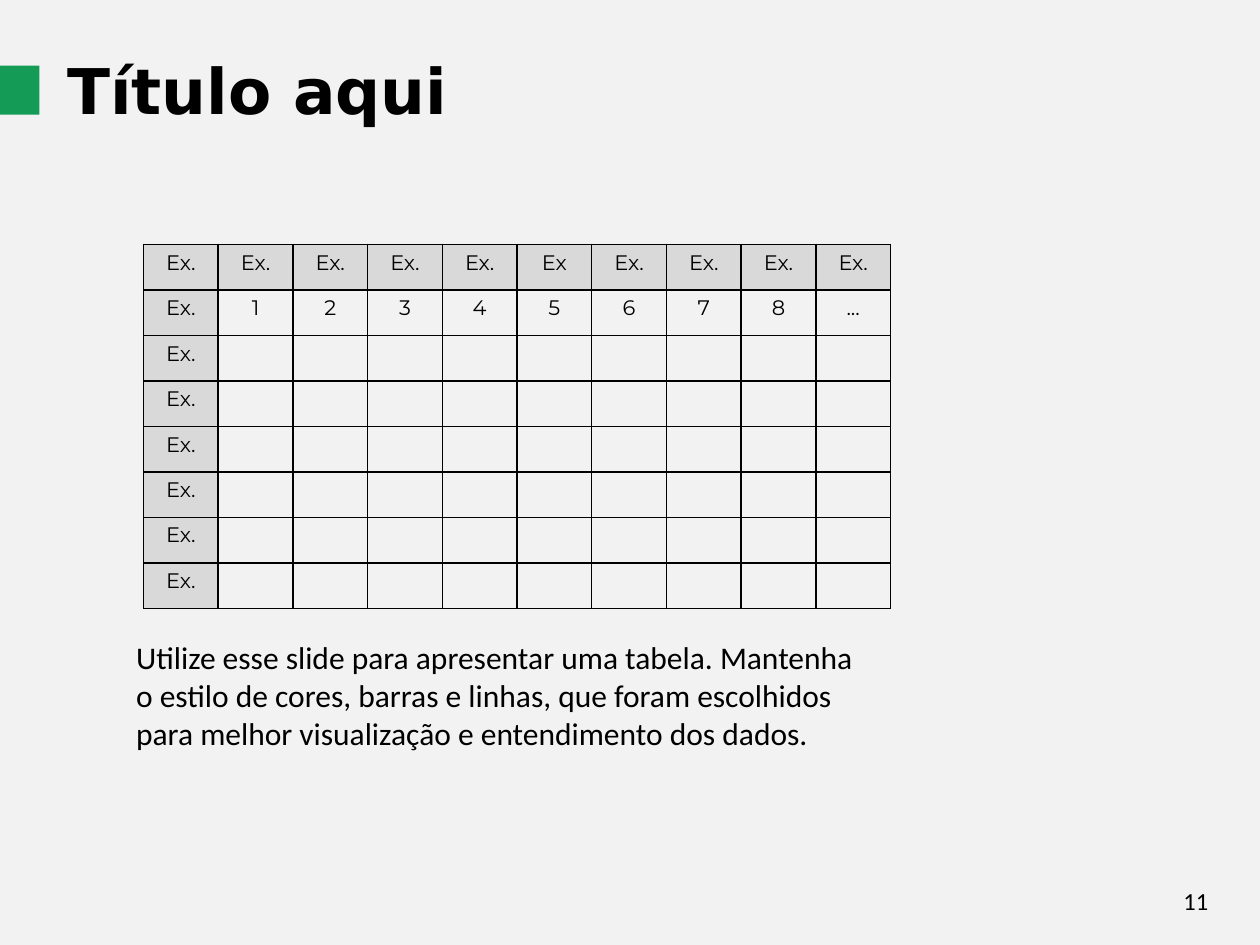
from lxml.etree import SubElement
from pptx import Presentation
from pptx.dml.color import RGBColor
from pptx.enum.shapes import MSO_SHAPE
from pptx.enum.text import MSO_ANCHOR as ANCHOR, PP_ALIGN as ALIGN
from pptx.oxml.ns import qn
from pptx.util import Pt

BLACK = RGBColor(0x00, 0x00, 0x00)
GREEN = RGBColor(0x14, 0x9B, 0x55)
GRAY = RGBColor(0xD9, 0xD9, 0xD9)
BACKGROUND = RGBColor(0xF2, 0xF2, 0xF2)

TITLE = dict(name="DejaVu Sans", size=Pt(36), bold=True)
BODY = dict(name="Calibri", size=Pt(18))
NUMBER = dict(name="Calibri", size=Pt(14))
CELL = dict(name="Montserrat", size=Pt(12))

COLS = 10
ROWS = [
    ["Ex."] * 5 + ["Ex"] + ["Ex."] * 4,
    ["Ex.", "1", "2", "3", "4", "5", "6", "7", "8", "..."],
] + [["Ex."] + [""] * (COLS - 1)] * 6


def write(p, text, style, align=ALIGN.LEFT):
    p.alignment = align
    r = p.add_run()
    r.text = text
    for key, value in style.items():
        setattr(r.font, key, value)
    r.font.color.rgb = BLACK


def add_text(s, box, text, style, align=ALIGN.LEFT, anchor=ANCHOR.TOP):
    tf = s.shapes.add_textbox(*map(Pt, box)).text_frame
    tf.word_wrap = True
    tf.vertical_anchor = anchor
    write(tf.paragraphs[0], text, style, align)


def add_title(s, box, text):
    left, top, width, height = box
    marker = s.shapes.add_shape(
        MSO_SHAPE.RECTANGLE, Pt(left), Pt(top + 11.5), Pt(25.2), Pt(28.1))
    marker.shadow.inherit = False
    marker.fill.solid()
    marker.fill.fore_color.rgb = GREEN
    marker.line.fill.background()
    add_text(s, (left + 34, top, width - 34, height), text, TITLE)


def add_borders(cell):
    tc_pr = cell._tc.get_or_add_tcPr()
    for index, side in enumerate(("lnL", "lnR", "lnT", "lnB")):
        ln = tc_pr.makeelement(qn(f"a:{side}"), {"w": str(Pt(1))})
        fill = SubElement(ln, qn("a:solidFill"))
        SubElement(fill, qn("a:srgbClr"), val=str(BLACK))
        tc_pr.insert(index, ln)


def fill_cell(cell, text, is_header):
    cell.margin_left = cell.margin_right = Pt(6.75)
    cell.margin_top = cell.margin_bottom = Pt(3)
    if is_header:
        cell.fill.solid()
        cell.fill.fore_color.rgb = GRAY
    else:
        cell.fill.background()
    p = cell.text_frame.paragraphs[0]
    if text:
        write(p, text, CELL, ALIGN.CENTER)
    else:
        SubElement(p._p, qn("a:endParaRPr"), sz=str(int(CELL["size"].pt * 100)))
    add_borders(cell)


def add_grid(s, box, rows):
    left, top, width, height = box
    table = s.shapes.add_table(len(rows), COLS, *map(Pt, box)).table
    table.first_row = table.horz_banding = False
    for col in table.columns:
        col.width = Pt(width / COLS)
    for row in table.rows:
        row.height = Pt(height / len(rows))
    for i, texts in enumerate(rows):
        for j, text in enumerate(texts):
            fill_cell(table.cell(i, j), text, i == 0 or j == 0)


def main():
    prs = Presentation()
    prs.slide_width, prs.slide_height = Pt(720), Pt(540)
    s = prs.slides.add_slide(prs.slide_layouts[6])
    s.background.fill.solid()
    s.background.fill.fore_color.rgb = BACKGROUND
    add_grid(s, (82, 139.7, 427, 208), ROWS)
    add_title(s, (-2.7, 26, 521, 51), "Título aqui")
    add_text(s, (70.7, 361, 436.5, 72.7),
             "Utilize esse slide para apresentar uma tabela. Mantenha o estilo "
             "de cores, barras e linhas, que foram escolhidos para melhor "
             "visualização e entendimento dos dados.", BODY)
    add_text(s, (516, 500.5, 181.5, 28.8), "11", NUMBER, ALIGN.RIGHT, ANCHOR.MIDDLE)
    prs.save("out.pptx")


if __name__ == "__main__":
    main()
